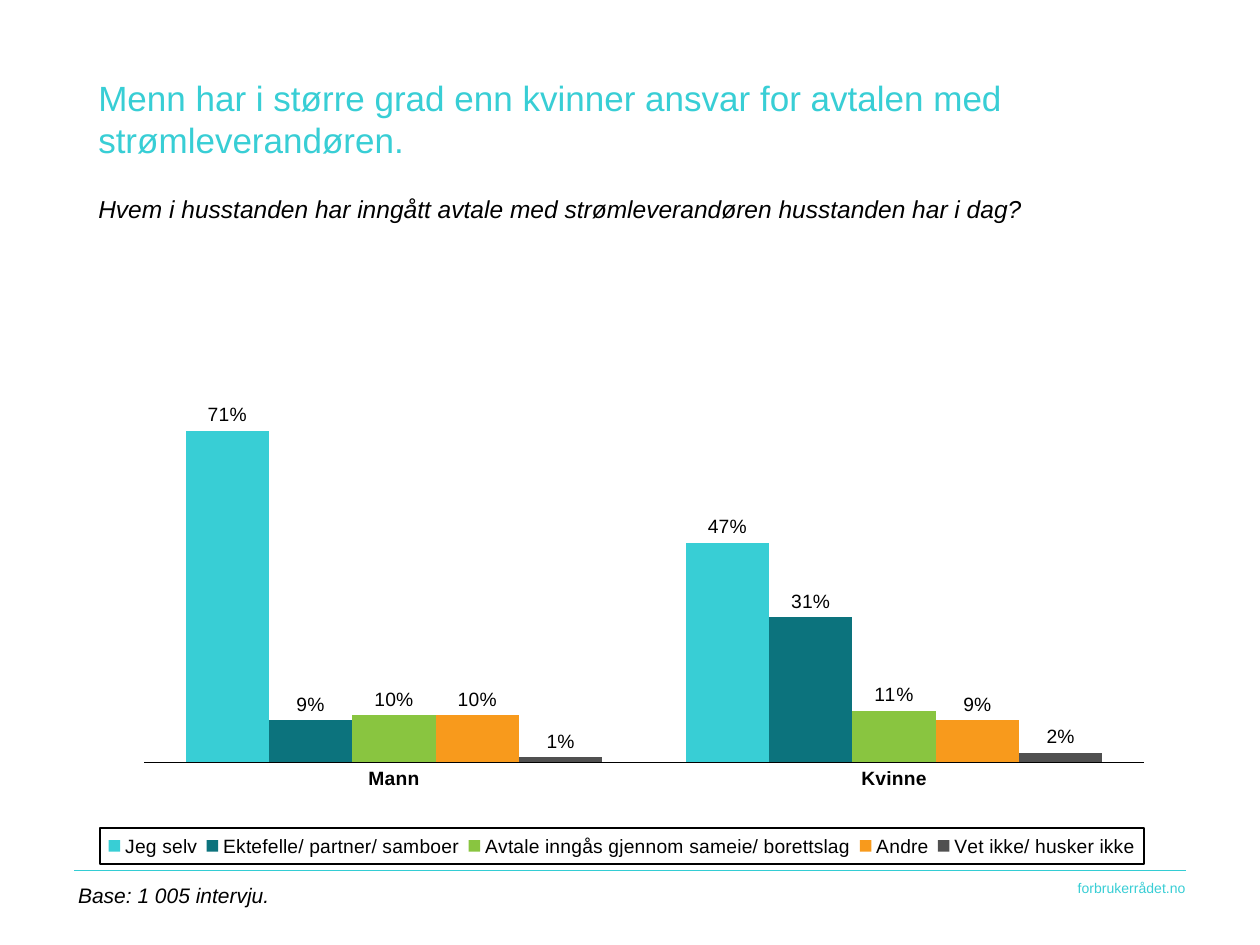
import pptx
import pptx.util
import pptx.chart.data
import pptx.dml.color
import pptx.enum.chart
import pptx.enum.shapes
import pptx.enum.text
import pptx.oxml
import pptx.oxml.ns

COLS, ROWS = 100, 75
TURQUOISE = "38CED5"
BLACK = "000000"
CATEGORIES = ["Mann", "Kvinne"]
SERIES = [
    ("Jeg selv", (0.71, 0.47), TURQUOISE),
    ("Ektefelle/ partner/ samboer", (0.09, 0.31), "0C737D"),
    ("Avtale inngås gjennom sameie/ borettslag", (0.10, 0.11), "89C540"),
    ("Andre", (0.10, 0.09), "F89A1C"),
    ("Vet ikke/ husker ikke", (0.01, 0.02), "505050"),
]

prs = pptx.Presentation()
prs.slide_width = pptx.util.Inches(10)
prs.slide_height = pptx.util.Inches(7.5)


def col(n):
    return round(prs.slide_width * n / COLS)


def row(n):
    return round(prs.slide_height * n / ROWS)


def rgb(color):
    return pptx.dml.color.RGBColor.from_string(color)


def place(x, y, w, h):
    return col(x), row(y), col(w), row(h)


def set_font(font, size, color=BLACK, bold=False, italic=False):
    font.name = "Arial"
    font.size = pptx.util.Pt(size)
    font.bold = bold
    font.italic = italic
    font.color.rgb = rgb(color)


def add_frame(s, x, y, w, h, anchor="TOP"):
    tf = s.shapes.add_textbox(*place(x, y, w, h)).text_frame
    tf.word_wrap = True
    tf.margin_left = tf.margin_right = tf.margin_top = tf.margin_bottom = 0
    tf.vertical_anchor = pptx.enum.text.MSO_ANCHOR[anchor]
    return tf


def add_text(p, text, align="LEFT", before=0, spacing=None, **style):
    p.alignment = pptx.enum.text.PP_ALIGN[align]
    p.space_before = pptx.util.Pt(before)
    if spacing:
        p.line_spacing = pptx.util.Pt(spacing)
    r = p.add_run()
    r.text = text
    set_font(r.font, **style)


def make_xml(tag, body):
    ns = pptx.oxml.ns.nsdecls("c", "a")
    return pptx.oxml.parse_xml(f"<{tag} {ns}>{body}</{tag}>")


def make_layout(x, y, w, h, inner=False):
    target = '<c:layoutTarget val="inner"/>' if inner else ""
    modes = '<c:xMode val="edge"/><c:yMode val="edge"/>'
    sizes = "".join(f'<c:{k} val="{v}"/>' for k, v in zip("xywh", (x, y, w, h)))
    return make_xml("c:layout", f"<c:manualLayout>{target}{modes}{sizes}</c:manualLayout>")


def draw_heading(s, x, y, w, h):
    tf = add_frame(s, x, y, w, h)
    add_text(tf.paragraphs[0],
             "Menn har i større grad enn kvinner ansvar for avtalen med strømleverandøren.",
             spacing=24, size=20, color=TURQUOISE)
    add_text(tf.add_paragraph(),
             "Hvem i husstanden har inngått avtale med strømleverandøren husstanden har i dag?",
             before=19, size=14, italic=True)


def style_legend(chart):
    chart.has_legend = True
    legend = chart.legend
    legend.position = pptx.enum.chart.XL_LEGEND_POSITION.BOTTOM
    legend.include_in_layout = False
    set_font(legend.font, 11)
    el = legend._element
    el.find(pptx.oxml.ns.qn("c:legendPos")).addnext(make_layout(0.05, 0.91, 0.94, 0.06))
    border = make_xml("c:spPr", f'<a:ln w="12700"><a:solidFill><a:srgbClr val="{BLACK}"/>'
                                "</a:solidFill></a:ln>")
    el.find(pptx.oxml.ns.qn("c:overlay")).addnext(border)


def style_axes(chart):
    cat = chart.category_axis
    cat.major_tick_mark = pptx.enum.chart.XL_TICK_MARK.NONE
    cat.format.line.color.rgb = rgb(BLACK)
    cat.format.line.width = pptx.util.Pt(0.22)
    set_font(cat.tick_labels.font, 11, bold=True)
    val = chart.value_axis
    val.visible = False
    val.has_major_gridlines = False
    val.minimum_scale, val.maximum_scale, val.major_unit = 0, 1, 0.1


def draw_chart(s, x, y, w, h):
    data = pptx.chart.data.CategoryChartData(number_format="0%")
    data.categories = CATEGORIES
    for name, values, _ in SERIES:
        data.add_series(name, values)
    chart = s.shapes.add_chart(pptx.enum.chart.XL_CHART_TYPE.COLUMN_CLUSTERED,
                               *place(x, y, w, h), data).chart
    chart.has_title = False
    set_font(chart.font, 11)
    style_axes(chart)
    style_legend(chart)
    plot = chart.plots[0]
    plot.vary_by_categories = False
    plot.gap_width, plot.overlap = 100, 0
    for series, (_, _, color) in zip(plot.series, SERIES):
        series.format.fill.solid()
        series.format.fill.fore_color.rgb = rgb(color)
        labels = series.data_labels
        labels.show_value = True
        labels.number_format = "0%"
        labels.number_format_is_linked = False
        labels.position = pptx.enum.chart.XL_LABEL_POSITION.OUTSIDE_END
        set_font(labels.font, 11)
    area = chart._chartSpace.chart.plotArea
    for old in area.findall(pptx.oxml.ns.qn("c:layout")):
        area.remove(old)
    area.insert(0, make_layout(0.09, 0.02, 0.9, 0.78, inner=True))


def draw_footer(s, x, y, w, h):
    rule = s.shapes.add_connector(pptx.enum.shapes.MSO_CONNECTOR.STRAIGHT,
                                  col(x), row(y), col(x + w), row(y))
    rule.line.color.rgb = rgb("33CDD4")
    rule.line.width = pptx.util.Pt(0.92)
    rule._element.spPr.append(make_xml("a:effectLst", ""))
    site = add_frame(s, x + w * 0.67, y + h * 0.2, w * 0.33, h * 0.3)
    add_text(site.paragraphs[0], "forbrukerrådet.no", align="RIGHT", size=8, color=TURQUOISE)
    base = add_frame(s, x + 0.3, y + h * 0.2, w * 0.6, h * 0.61, anchor="BOTTOM")
    add_text(base.paragraphs[0], "Base: 1 005 intervju.", size=12, italic=True)


def main():
    s = prs.slides.add_slide(prs.slide_layouts[6])
    draw_footer(s, 5.9, 69.1, 88.2, 3.6)
    draw_chart(s, 3.5, 22.5, 88.2, 47.5)
    draw_heading(s, 7.8, 6.1, 79.5, 14)
    prs.save("out.pptx")


if __name__ == "__main__":
    main()
